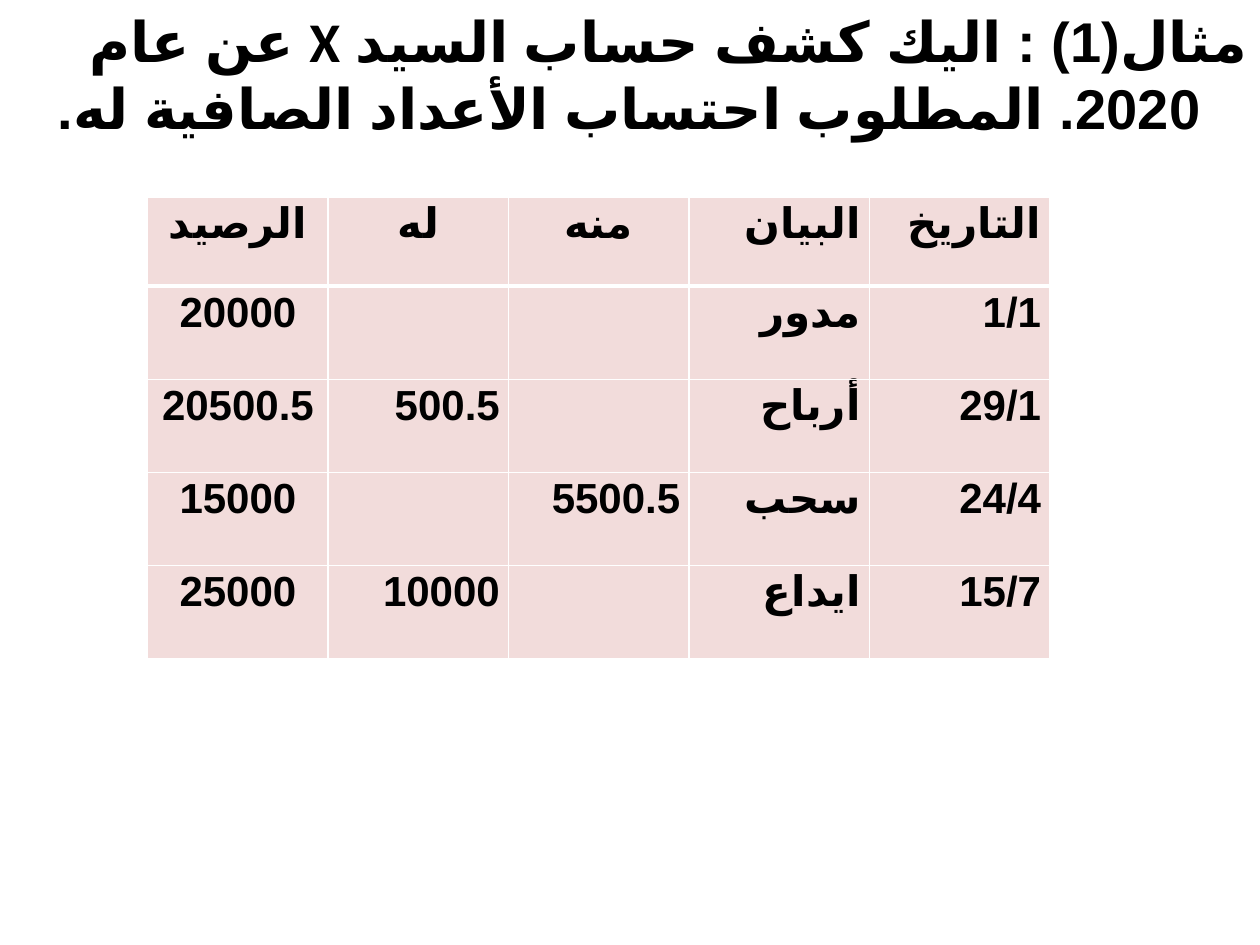
from dataclasses import dataclass

from lxml import etree
from pptx import Presentation
from pptx.dml.color import RGBColor
from pptx.enum.text import PP_ALIGN
from pptx.oxml.ns import qn
from pptx.util import Pt

CENTER = PP_ALIGN.CENTER
RIGHT = PP_ALIGN.RIGHT


@dataclass(frozen=True)
class Theme:
    text: str = "000000"
    cell: str = "F2DCDB"
    border: str = "FFFFFF"
    font: str = "Calibri"
    arabic_font: str = "Arial"
    title_size: int = 32
    table_size: int = 24


THEME = Theme()
TITLE = "مثال(1) : اليك كشف حساب السيد X عن عام 2020. المطلوب احتساب الأعداد الصافية له."
STATEMENT = [
    ["الرصيد", "له", "منه", "البيان", "التاريخ"],
    ["20000", "", "", "مدور", "1/1"],
    ["20500.5", "500.5", "", "أرباح", "29/1"],
    ["15000", "", "5500.5", "سحب", "24/4"],
    ["25000", "10000", "", "ايداع", "15/7"],
]
CENTERED_HEADERS = 3
COLUMN_WIDTH = 103.1
HEADER_HEIGHT = 51
ROW_HEIGHT = 53.25
CELL_FORMAT = {"line_spacing": 1.07, "space_after": Pt(8)}
CELL_MARGINS = {
    "margin_left": Pt(5),
    "margin_right": Pt(5),
    "margin_top": Pt(0),
    "margin_bottom": Pt(0),
}


def apply(target, values):
    for name, value in values.items():
        setattr(target, name, value)


def write_arabic(paragraph, text, size, alignment):
    paragraph.alignment = alignment
    paragraph._p.get_or_add_pPr().set("rtl", "1")
    font_format = {"name": THEME.font, "size": Pt(size), "bold": True}
    if text:
        run = paragraph.add_run()
        run.text = text
        font = run.font
        properties = run._r.get_or_add_rPr()
        properties.set("lang", "ar-SA")
    else:
        font = paragraph.font
    apply(font, font_format)
    font.color.rgb = RGBColor.from_string(THEME.text)
    if text:
        etree.SubElement(properties, qn("a:cs"), typeface=THEME.arabic_font)


def add_title(slide, width, height):
    frame = slide.shapes.add_textbox(0, 0, width, height).text_frame
    frame.word_wrap = True
    paragraph = frame.paragraphs[0]
    write_arabic(paragraph, TITLE, THEME.title_size, RIGHT)
    properties = paragraph._p.get_or_add_pPr()
    properties.set("marL", str(Pt(27)))
    properties.set("indent", str(Pt(-27)))
    paragraph.space_before = Pt(0.2 * THEME.title_size)


def set_borders(cell, widths):
    properties = cell._tc.get_or_add_tcPr()
    for position, (side, width) in enumerate(widths.items()):
        line = etree.Element(qn(f"a:ln{side}"), w=str(Pt(width)))
        fill = etree.SubElement(line, qn("a:solidFill"))
        etree.SubElement(fill, qn("a:srgbClr"), val=THEME.border)
        properties.insert(position, line)


def fill_cell(cell, text, row, column):
    centered = column == 0 or (row == 0 and column < CENTERED_HEADERS)
    apply(cell, CELL_MARGINS)
    cell.fill.solid()
    cell.fill.fore_color.rgb = RGBColor.from_string(THEME.cell)
    paragraph = cell.text_frame.paragraphs[0]
    write_arabic(paragraph, text, THEME.table_size, CENTER if centered else RIGHT)
    apply(paragraph, CELL_FORMAT)
    top = 3 if row == 1 else 1
    bottom = 3 if row == 0 else 1
    set_borders(cell, {"L": 1, "R": 1, "T": top, "B": bottom})


def add_statement(slide, left, top):
    rows, columns = len(STATEMENT), len(STATEMENT[0])
    height = HEADER_HEIGHT + (rows - 1) * ROW_HEIGHT
    table = slide.shapes.add_table(
        rows, columns, Pt(left), Pt(top), Pt(columns * COLUMN_WIDTH), Pt(height)
    ).table
    apply(table, {"first_row": False, "horz_banding": False})
    for column in table.columns:
        column.width = Pt(COLUMN_WIDTH)
    for row, values in enumerate(STATEMENT):
        table.rows[row].height = Pt(ROW_HEIGHT if row else HEADER_HEIGHT)
        for column, text in enumerate(values):
            fill_cell(table.cell(row, column), text, row, column)


def main():
    presentation = Presentation()
    apply(presentation, {"slide_width": Pt(720), "slide_height": Pt(540)})
    slide = presentation.slides.add_slide(presentation.slide_layouts[6])
    add_title(slide, presentation.slide_width, presentation.slide_height)
    add_statement(slide, 84.4, 112.5)
    presentation.save("out.pptx")


if __name__ == "__main__":
    main()
